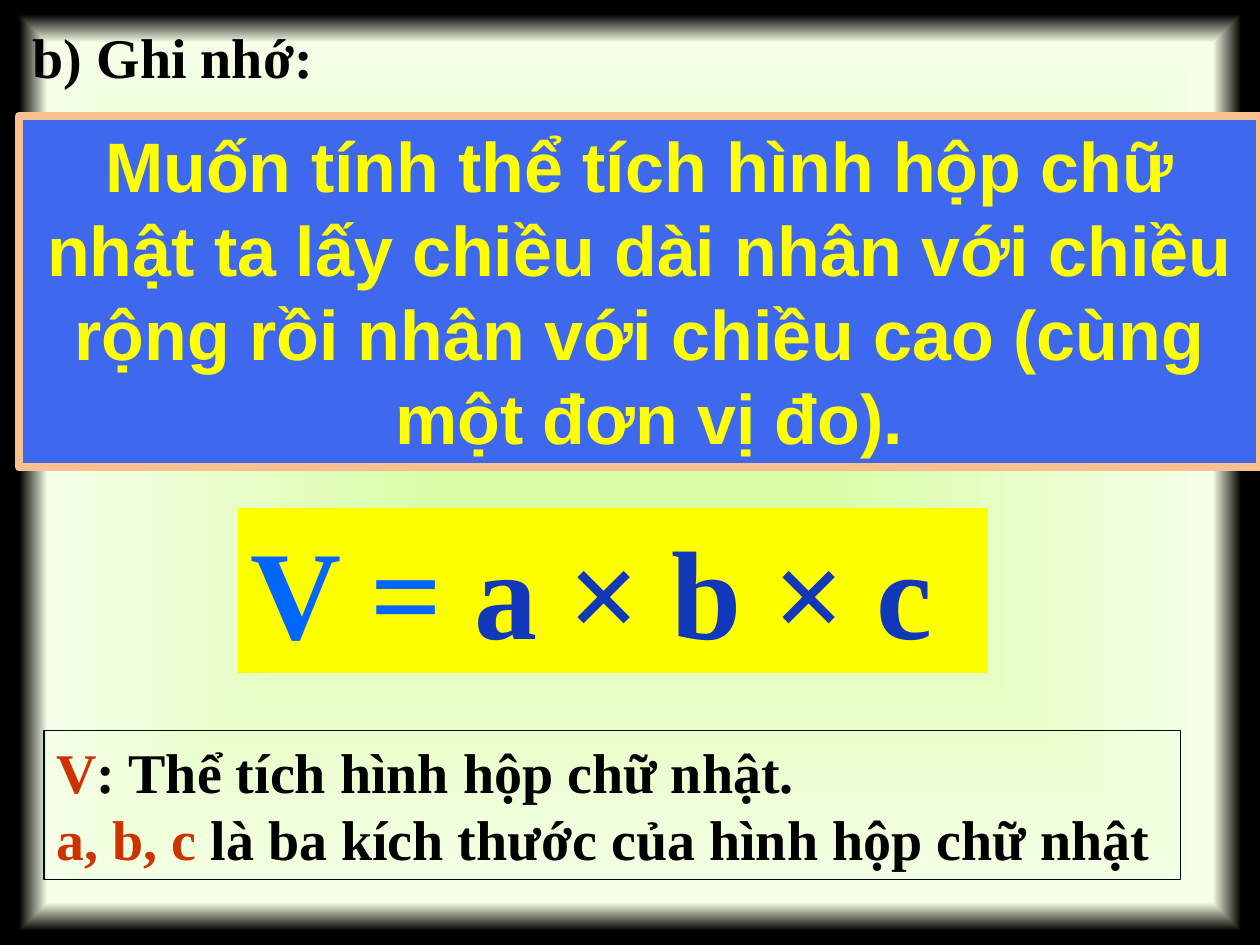
import lxml.etree
import pptx
import pptx.dml.color
import pptx.enum.shapes
import pptx.enum.text
import pptx.oxml
import pptx.oxml.ns
import pptx.util
from pptx.util import Inches

SERIF = "Times New Roman"
SANS = "Arial"
BLACK = "000000"
YELLOW = "FFFF00"
RED = "CC3300"
LEFT = pptx.enum.text.PP_ALIGN.LEFT
CENTER = pptx.enum.text.PP_ALIGN.CENTER


def color(value):
    return pptx.dml.color.RGBColor.from_string(value)


def set_background(slide, stops):
    """Fill the slide with a gradient that runs from its centre to its edges."""
    slide.background.fill.gradient()
    gradient = slide.background._cSld.find(".//" + pptx.oxml.ns.qn("a:gradFill"))
    stop_xml = "".join(
        f'<a:gs pos="{percent * 1000}"><a:srgbClr val="{value}"/></a:gs>'
        for percent, value in stops
    )
    replacement = pptx.oxml.parse_xml(
        f'<a:gradFill {pptx.oxml.ns.nsdecls("a")} rotWithShape="1">'
        f"<a:gsLst>{stop_xml}</a:gsLst>"
        '<a:path path="shape"><a:fillToRect l="50000" t="50000" r="50000" b="50000"/></a:path>'
        "</a:gradFill>"
    )
    gradient.getparent().replace(gradient, replacement)


def set_half_line_before(paragraph):
    paragraph.space_before = pptx.util.Pt(0)
    spacing = paragraph._p.pPr.find(pptx.oxml.ns.qn("a:spcBef"))
    spacing.remove(spacing[0])
    percent = lxml.etree.SubElement(spacing, pptx.oxml.ns.qn("a:spcPct"))
    percent.set("val", "50000")


def write_text(shape, paragraphs, font_name, size, alignment=LEFT):
    """Write paragraphs, each a list of (text, colour) runs, in bold."""
    frame = shape.text_frame
    frame.word_wrap = True
    frame.auto_size = pptx.enum.text.MSO_AUTO_SIZE.SHAPE_TO_FIT_TEXT
    frame.vertical_anchor = pptx.enum.text.MSO_ANCHOR.TOP
    for index, runs in enumerate(paragraphs):
        paragraph = frame.add_paragraph() if index else frame.paragraphs[0]
        paragraph.alignment = alignment
        paragraph.font.name = font_name
        paragraph.font.size = pptx.util.Pt(size)
        paragraph.font.bold = True
        for text, text_color in runs:
            run = paragraph.add_run()
            run.text = text
            run.font.color.rgb = color(text_color)


def add_box(slide, left, top, width, height, fill=None, line=None, line_width=0.75):
    shape = slide.shapes.add_shape(
        pptx.enum.shapes.MSO_SHAPE.RECTANGLE,
        Inches(left), Inches(top), Inches(width), Inches(height),
    )
    shape.shadow.inherit = False
    if fill:
        shape.fill.solid()
        shape.fill.fore_color.rgb = color(fill)
    else:
        shape.fill.background()
    if line:
        shape.line.color.rgb = color(line)
        shape.line.width = pptx.util.Pt(line_width)
    else:
        shape.line.fill.background()
    return shape


def add_title(slide, text):
    title = slide.shapes.title
    title.left, title.top = Inches(0.16), Inches(0.13)
    title.width, title.height = Inches(2.56), Inches(0.64)
    write_text(title, [[(text, BLACK)]], SERIF, 32)


def main():
    presentation = pptx.Presentation()
    presentation.slide_width = Inches(10)
    presentation.slide_height = Inches(7.5)
    slide = presentation.slides.add_slide(presentation.slide_layouts[5])
    set_background(slide, [(8, "DAFDA7"), (91, "F5FFE7"), (97, BLACK)])
    add_title(slide, "b) Ghi nhớ:")

    formula = add_box(slide, 1.89, 4.03, 5.95, 1.31, fill=YELLOW)
    write_text(formula, [[("V = ", "0066FF"), ("a × b × c", "1038B8")]], SERIF, 72)
    set_half_line_before(formula.text_frame.paragraphs[0])

    legend = add_box(slide, 0.35, 5.8, 9.02, 1.18, line="000810")
    write_text(legend, [
        [("V", RED), (": Thể tích hình hộp chữ nhật.", BLACK)],
        [("a, b, c ", RED), ("là ba kích thước của hình hộp chữ nhật", BLACK)],
    ], SERIF, 32)

    rule = add_box(slide, 0.15, 0.92, 9.85, 2.79, "3E68EE", "FAC090", 4.5)
    write_text(rule, [
        [("Muốn tính thể tích hình hộp chữ nhật ta lấy chiều dài nhân với "
          "chiều rộng rồi nhân với chiều cao (cùng", YELLOW)],
        [(" một đơn vị đo).", YELLOW)],
    ], SANS, 40, CENTER)
    set_half_line_before(rule.text_frame.paragraphs[0])

    presentation.save("out.pptx")


if __name__ == "__main__":
    main()
